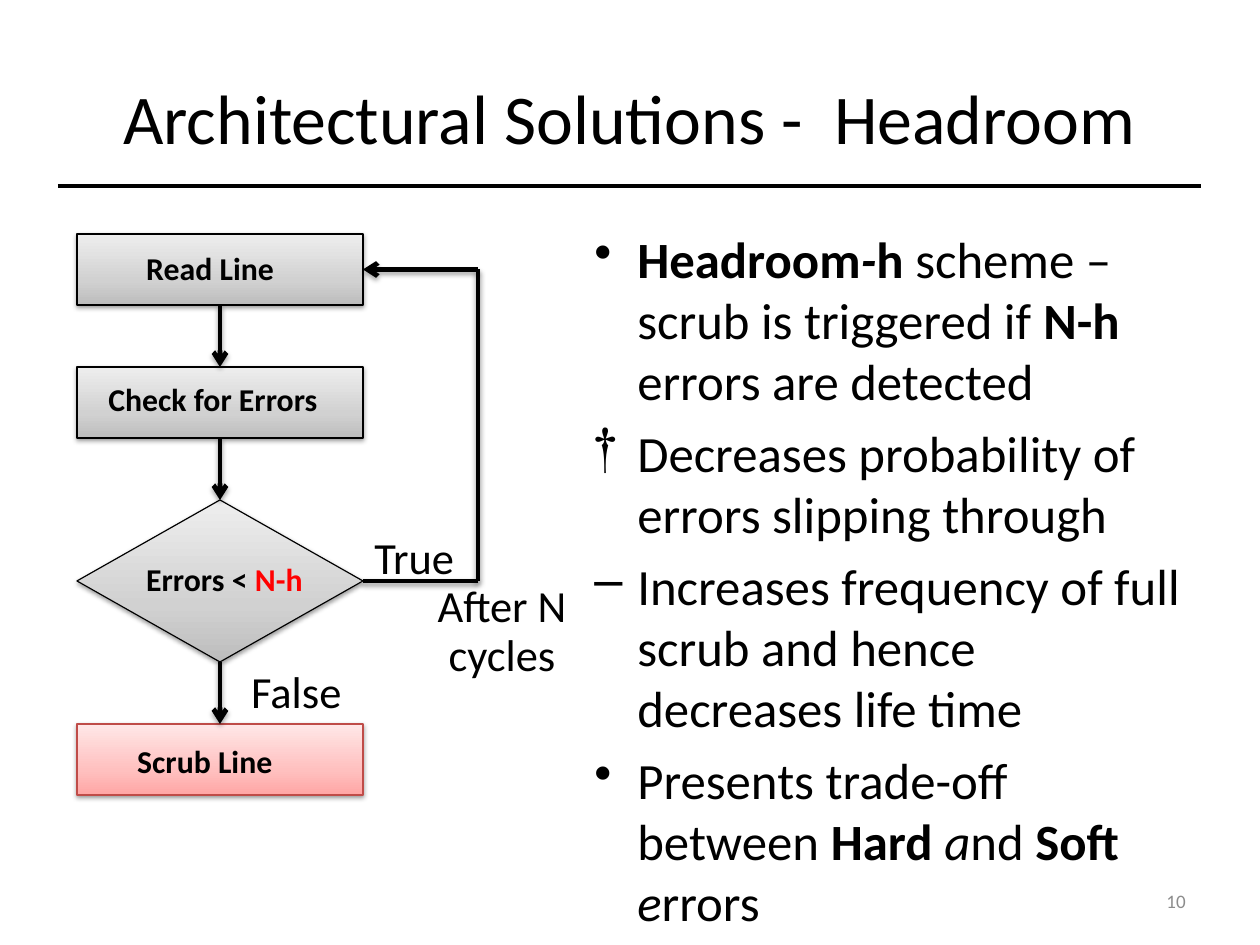
import copy
import dataclasses

import pptx
import pptx.dml.color
import pptx.enum.shapes
import pptx.enum.text
import pptx.oxml
import pptx.oxml.ns
import pptx.util

SHAPES = pptx.enum.shapes.MSO_SHAPE
ALIGN = pptx.enum.text.PP_ALIGN
ANCHOR = pptx.enum.text.MSO_ANCHOR
TOP, LEFT, BOTTOM, RIGHT = range(4)


@dataclasses.dataclass(frozen=True)
class Theme:
    font: str = "Calibri"
    ink: str = "000000"
    accent: str = "FF0000"
    muted: str = "8C8C8C"
    alert_line: str = "BF4C48"
    grey: tuple = ((0, "BDBDBD"), (0.35, "D1D1D1"), (1, "EEEEEE"))
    pink: tuple = ((0, "FFA6A5"), (0.35, "FFC0BF"), (1, "FFE7E7"))
    title: int = 44
    body: int = 32
    branch: int = 28
    step: int = 20
    number: int = 12


THEME = Theme()

# Content: a run is (text, style), where b is bold, i italic, r red
TITLE = "Architectural Solutions -  Headroom"
PAGE_NUMBER = "10"
BULLETS = [
    ("•", [("Headroom", "b"), ("-", "bi"), ("h", "b"),
           (" scheme – scrub is triggered if ", ""), ("N-h", "b"),
           (" errors are detected", "")]),
    ("†", [("Decreases probability of errors slipping through", "")]),
    ("–", [("Increases frequency of full scrub and hence decreases life time", "")]),
    ("•", [("Presents trade-off between ", ""), ("Hard", "b"), (" a", "i"),
           ("nd ", ""), ("Soft", "b"), (" e", "i"), ("rrors", "")]),
]
# Kind, height, gradient, outline, label runs, label box
STEPS = [
    (SHAPES.FLOWCHART_PROCESS, 71, THEME.grey, THEME.ink,
     [("Read Line", "b")], (135, 247, 162, 47)),
    (SHAPES.FLOWCHART_PROCESS, 71, THEME.grey, THEME.ink,
     [("Check for Errors", "b")], (97, 378, 238, 47)),
    (SHAPES.FLOWCHART_DECISION, 162, THEME.grey, THEME.ink,
     [("Errors < ", "b"), ("N-h", "br")], (135, 558, 181, 47)),
    (SHAPES.FLOWCHART_PROCESS, 71, THEME.pink, THEME.alert_line,
     [("Scrub Line", "b")], (126, 740, 209, 47)),
]
BRANCHES = [
    ("True", (363, 529, 114, 62), ALIGN.LEFT),
    ("False", (240, 663, 114, 62), ALIGN.LEFT),
    ("After N cycles", (383, 577, 238, 112), ALIGN.CENTER),
]

# Layout in px
SLIDE_SIZE = (1260, 945)
TITLE_BOX = (63, 38, 1134, 158)
BODY_BOX = (583, 222, 615, 662)
NUMBER_BOX = (903, 876, 294, 50)
RULE_LEFT, RULE_RIGHT, RULE_Y = 58, 1201, 186
STEP_LEFT, STEP_TOP, STEP_WIDTH, STEP_GAP = 77, 234, 286, 62
LOOP_X = 478
BULLET_INDENT = 43


def px(length):
    return pptx.util.Emu(int(length * 8000))


def box(values):
    return [px(value) for value in values]


def rgb(color):
    return pptx.dml.color.RGBColor.from_string(color)


def append_xml(parent, tag, content="", attributes=""):
    parent.append(pptx.oxml.parse_xml(
        f'<a:{tag} {pptx.oxml.ns.nsdecls("a")} {attributes}>{content}</a:{tag}>'))


def write_text(frame, text, size, color=THEME.ink, align=ALIGN.LEFT,
               anchor=ANCHOR.TOP, line_spacing=None, bullet=None, first=True):
    """Write one paragraph given as a string or as styled runs."""
    frame.word_wrap = True
    frame.vertical_anchor = anchor
    paragraph = frame.paragraphs[0] if first else frame.add_paragraph()
    paragraph.alignment = align
    if line_spacing:
        paragraph.line_spacing = line_spacing
    if not first:
        paragraph.space_before = pptx.util.Pt(7)
    if bullet:
        properties = paragraph._p.get_or_add_pPr()
        properties.set("marL", str(px(BULLET_INDENT)))
        properties.set("indent", str(-px(BULLET_INDENT)))
        append_xml(properties, "buChar", attributes=f'char="{bullet}"')
    for words, style in [(text, "")] if isinstance(text, str) else text:
        run = paragraph.add_run()
        run.text = words
        run.font.name = THEME.font
        run.font.size = pptx.util.Pt(size)
        run.font.bold = "b" in style
        run.font.italic = "i" in style
        run.font.color.rgb = rgb(THEME.accent if "r" in style else color)


def add_shadow(shape, opacity, distance):
    append_xml(
        shape._element.spPr, "effectLst",
        f'<a:outerShdw blurRad="{pptx.util.Pt(3.1)}" dist="{pptx.util.Pt(distance)}" '
        f'dir="5400000" rotWithShape="0"><a:srgbClr val="{THEME.ink}">'
        f'<a:alpha val="{opacity * 1000}"/></a:srgbClr></a:outerShdw>')


def add_line(slide, start, end, arrow=False, shadow=True):
    line = slide.shapes.add_connector(
        pptx.enum.shapes.MSO_CONNECTOR.STRAIGHT, *box(start + end))
    line.line.color.rgb = rgb(THEME.ink)
    line.line.width = pptx.util.Pt(3)
    if arrow:
        append_xml(line.line._get_or_add_ln(), "tailEnd", attributes='type="arrow"')
    if shadow:
        add_shadow(line, 35, 1.8)
    else:
        append_xml(line._element.spPr, "effectLst")
    return line


def add_step(slide, kind, top, height, gradient, outline):
    shape = slide.shapes.add_shape(kind, *box((STEP_LEFT, top, STEP_WIDTH, height)))
    shape.fill.gradient()
    shape.fill.gradient_angle = 90
    stops = shape._element.spPr.find(".//" + pptx.oxml.ns.qn("a:gsLst"))
    stops.insert(1, copy.deepcopy(stops[0]))
    for stop, (position, color) in zip(shape.fill.gradient_stops, gradient):
        stop.position = position
        stop.color.rgb = rgb(color)
    shape.line.color.rgb = rgb(outline)
    shape.line.width = pptx.util.Pt(0.75)
    add_shadow(shape, 38, 1.6)
    return shape


def main():
    presentation = pptx.Presentation()
    presentation.slide_width, presentation.slide_height = box(SLIDE_SIZE)
    slide = presentation.slides.add_slide(presentation.slide_layouts[5])

    # Title and rule
    add_line(slide, (RULE_LEFT, RULE_Y), (RULE_RIGHT, RULE_Y), shadow=False)
    title = slide.shapes.title
    title.left, title.top, title.width, title.height = box(TITLE_BOX)
    write_text(title.text_frame, TITLE, THEME.title,
               align=ALIGN.CENTER, anchor=ANCHOR.MIDDLE)

    # Bullets and page number
    body = slide.shapes.add_textbox(*box(BODY_BOX)).text_frame
    for index, (bullet, runs) in enumerate(BULLETS):
        write_text(body, runs, THEME.body, bullet=bullet, first=index == 0)
    number = slide.shapes.add_textbox(*box(NUMBER_BOX)).text_frame
    write_text(number, PAGE_NUMBER, THEME.number, color=THEME.muted,
               align=ALIGN.RIGHT, anchor=ANCHOR.MIDDLE)

    # Flowchart steps, stacked with equal gaps
    steps, middles, top = [], [], STEP_TOP
    for kind, height, gradient, outline, _, _ in STEPS:
        steps.append(add_step(slide, kind, top, height, gradient, outline))
        middles.append(top + height / 2)
        top += height + STEP_GAP

    # Arrows down
    center = STEP_LEFT + STEP_WIDTH / 2
    for index in range(len(steps) - 1):
        arrow = add_line(slide, (center, middles[index]),
                         (center, middles[index + 1]), arrow=True)
        arrow.begin_connect(steps[index], BOTTOM)
        arrow.end_connect(steps[index + 1], TOP)

    # Loop from the decision back to the first step
    side = STEP_LEFT + STEP_WIDTH
    read_y, decision_y = middles[0], middles[2]
    leave = add_line(slide, (side, decision_y), (LOOP_X, decision_y))
    leave.begin_connect(steps[2], RIGHT)
    add_line(slide, (LOOP_X, decision_y), (LOOP_X, read_y))
    back = add_line(slide, (LOOP_X, read_y), (side, read_y), arrow=True)
    back.end_connect(steps[0], RIGHT)

    # Labels
    labels = [(runs, place, THEME.step, ALIGN.LEFT) for *_, runs, place in STEPS]
    labels += [(text, place, THEME.branch, align) for text, place, align in BRANCHES]
    for text, place, size, align in labels:
        frame = slide.shapes.add_textbox(*box(place)).text_frame
        write_text(frame, text, size, align=align, line_spacing=0.93)

    presentation.save("out.pptx")


if __name__ == "__main__":
    main()
